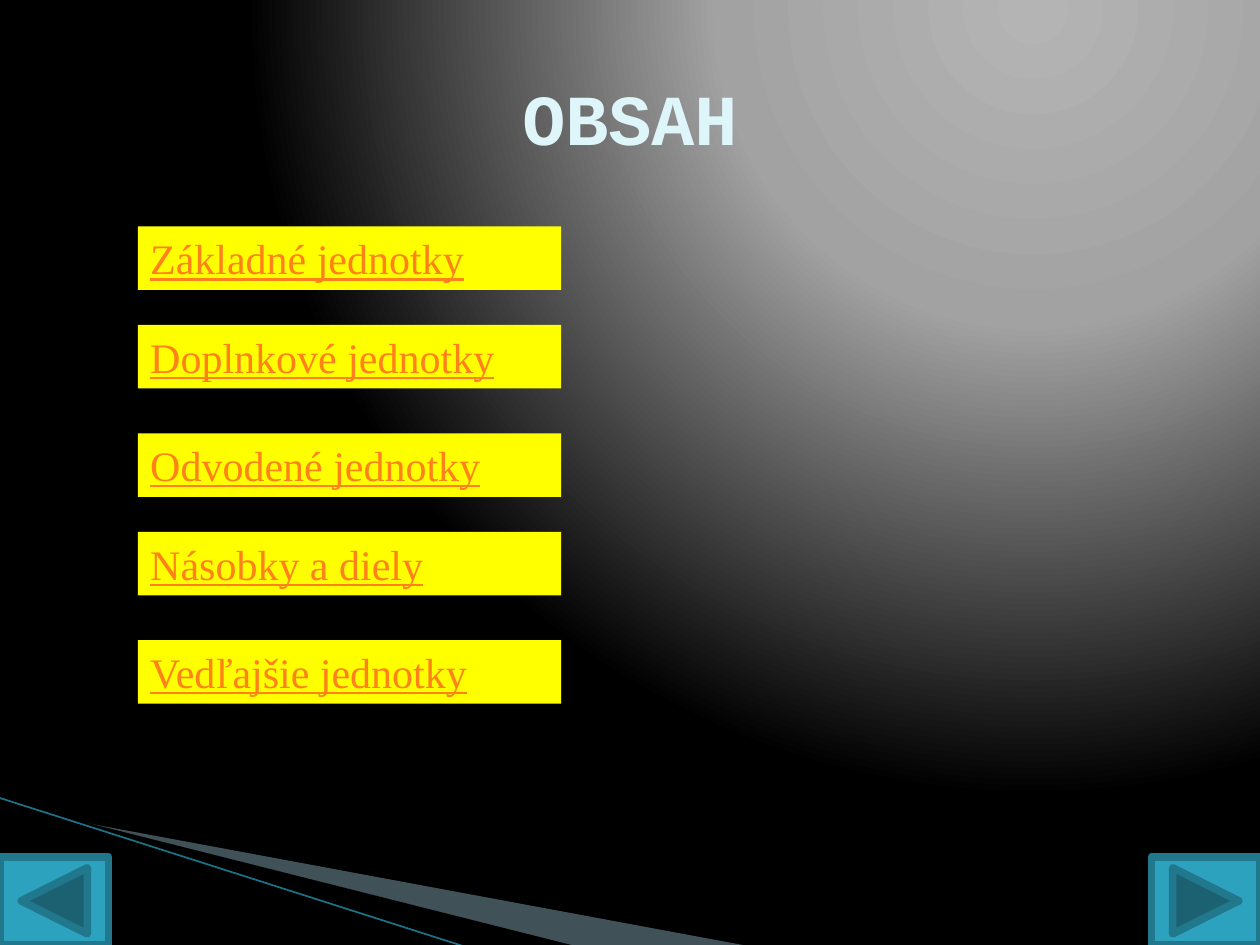
from dataclasses import dataclass
from itertools import accumulate

from lxml.etree import SubElement
from pptx import Presentation
from pptx.dml.color import RGBColor
from pptx.enum.shapes import MSO_CONNECTOR, MSO_SHAPE
from pptx.enum.text import MSO_ANCHOR, MSO_AUTO_SIZE, PP_ALIGN
from pptx.oxml.ns import qn
from pptx.util import Pt


@dataclass(frozen=True)
class Theme:
    title_font: str = "Courier New"
    item_font: str = "Times New Roman"
    title_size: float = 41
    item_size: float = 24
    title: str = "DEF5FA"
    item: str = "FF8119"
    item_fill: str = "FFFF00"
    button: str = "2DA2BF"
    button_line: str = "21788D"
    wedge: str = "A0CBDC"
    shade: str = "000000"
    stripe: str = "1A7488"
    glow: tuple = ((0, "B4B4B4"), (40, "A2A2A2"), (100, "000000"))


THEME = Theme()
SLIDE_WIDTH, SLIDE_HEIGHT = 720, 540
ITEMS = (
    "Základné jednotky",
    "Doplnkové jednotky",
    "Odvodené jednotky",
    "Násobky a diely",
    "Vedľajšie jednotky",
)
ITEM_LEFT, ITEM_WIDTH, ITEM_HEIGHT = 78.75, 242, 36.3
ITEM_TOPS = tuple(accumulate((129.4, 56.3, 61.9, 56.3, 61.9)))
BUTTON_WIDTH, BUTTON_HEIGHT = 62, 50.4


def color(value):
    return RGBColor.from_string(value)


def set_text(shape, text, *, font, size, fill, align, anchor, bold=False, underline=False):
    frame = shape.text_frame
    frame.word_wrap = True
    frame.vertical_anchor = anchor
    paragraph = frame.paragraphs[0]
    paragraph.alignment = align
    run = paragraph.add_run()
    run.text = text
    run.font.name = font
    run.font.size = Pt(size)
    run.font.bold = bold
    run.font.underline = underline
    run.font.color.rgb = color(fill)


def set_glow_background(slide):
    """Fill the background with a circular gradient centred at the upper right."""
    slide.background.fill.gradient()
    gradient = slide.element.xpath("./p:cSld/p:bg/p:bgPr/a:gradFill")[0]
    for child in list(gradient):
        gradient.remove(child)
    stops = SubElement(gradient, qn("a:gsLst"))
    for position, value in THEME.glow:
        stop = SubElement(stops, qn("a:gs"), pos=str(position * 1000))
        SubElement(stop, qn("a:srgbClr"), val=value)
    circle = SubElement(gradient, qn("a:path"), {"path": "circle"})
    SubElement(circle, qn("a:fillToRect"), l="65000", t="0", r="0", b="98000")


def add_wedge(slide, points, fill, opacity=100):
    start, *others = [(Pt(x), Pt(y)) for x, y in points]
    builder = slide.shapes.build_freeform(*start)
    builder.add_line_segments(others, close=True)
    wedge = builder.convert_to_shape()
    wedge.shadow.inherit = False
    wedge.fill.solid()
    wedge.fill.fore_color.rgb = color(fill)
    wedge.line.fill.background()
    if opacity < 100:
        value = wedge.element.xpath("./p:spPr/a:solidFill/a:srgbClr")[0]
        SubElement(value, qn("a:alpha"), val=str(opacity * 1000))


def add_stripe(slide, start, end):
    stripe = slide.shapes.add_connector(
        MSO_CONNECTOR.STRAIGHT, *(Pt(value) for value in (*start, *end))
    )
    stripe.line.color.rgb = color(THEME.stripe)
    stripe.line.width = Pt(0.95)
    SubElement(stripe.element.spPr, qn("a:effectLst"))


def add_box(slide, kind, left, top, width, height, fill, line=None):
    box = slide.shapes.add_shape(kind, Pt(left), Pt(top), Pt(width), Pt(height))
    box.shadow.inherit = False
    box.fill.solid()
    box.fill.fore_color.rgb = color(fill)
    if line:
        box.line.color.rgb = color(line)
        box.line.width = Pt(4.33)
    else:
        box.line.fill.background()
    return box


def add_title(slide, text):
    title = slide.shapes.title
    title.left, title.top, title.width, title.height = Pt(36), Pt(21.6), Pt(648), Pt(90)
    set_text(title, text, font=THEME.title_font, size=THEME.title_size, fill=THEME.title,
             align=PP_ALIGN.CENTER, anchor=MSO_ANCHOR.MIDDLE, bold=True)


def add_item(slide, text, top):
    box = add_box(slide, MSO_SHAPE.RECTANGLE, ITEM_LEFT, top, ITEM_WIDTH, ITEM_HEIGHT,
                  THEME.item_fill)
    set_text(box, text, font=THEME.item_font, size=THEME.item_size, fill=THEME.item,
             align=PP_ALIGN.LEFT, anchor=MSO_ANCHOR.TOP, underline=True)
    box.text_frame.auto_size = MSO_AUTO_SIZE.SHAPE_TO_FIT_TEXT


def add_button(slide, kind, left):
    add_box(slide, kind, left, SLIDE_HEIGHT - BUTTON_HEIGHT, BUTTON_WIDTH, BUTTON_HEIGHT,
            THEME.button, THEME.button_line)


def main():
    presentation = Presentation()
    presentation.slide_width = Pt(SLIDE_WIDTH)
    presentation.slide_height = Pt(SLIDE_HEIGHT)
    slide = presentation.slides.add_slide(presentation.slide_layouts[5])

    set_glow_background(slide)
    add_wedge(slide, ((39.6, 468.5), (428.4, 540.7), (328.3, 540.7), (39.6, 468)),
              THEME.wedge, opacity=40)
    add_wedge(slide, ((38.2, 467.3), (329, 540.7), (267.8, 541.4), (38.9, 468)), THEME.shade)
    add_stripe(slide, (-0.7, 455.8), (267.1, 541.4))

    add_title(slide, "OBSAH")
    for text, top in zip(ITEMS, ITEM_TOPS):
        add_item(slide, text, top)

    add_button(slide, MSO_SHAPE.ACTION_BUTTON_BACK_OR_PREVIOUS, 0)
    add_button(slide, MSO_SHAPE.ACTION_BUTTON_FORWARD_OR_NEXT, SLIDE_WIDTH - BUTTON_WIDTH)
    presentation.save("out.pptx")


if __name__ == "__main__":
    main()
